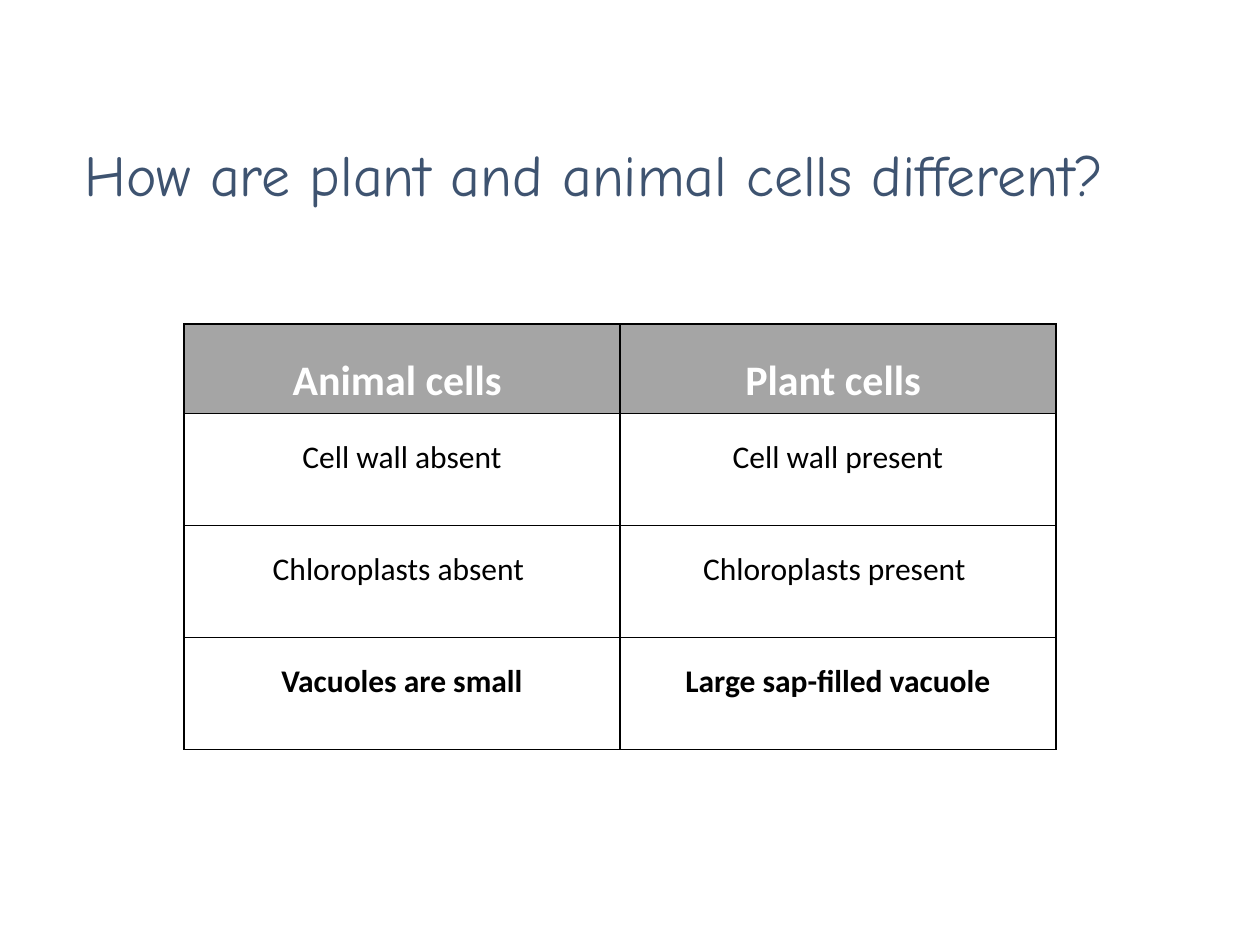
from lxml import etree
from pptx import Presentation
from pptx.dml.color import RGBColor
from pptx.enum.text import MSO_ANCHOR, PP_ALIGN
from pptx.oxml.ns import qn
from pptx.util import Emu, Pt

LEFT, CENTER = PP_ALIGN.LEFT, PP_ALIGN.CENTER
TOP, MIDDLE = MSO_ANCHOR.TOP, MSO_ANCHOR.MIDDLE
COLORS = {"title": "3E5370", "header": "A5A5A5", "white": "FFFFFF", "black": "000000"}
ROWS = [
    ("Animal cells ", "Plant cells "),
    ("Cell wall absent", "Cell wall present"),
    ("Chloroplasts absent ", "Chloroplasts present "),
    ("Vacuoles are small", "Large sap-filled vacuole"),
]
HEADER_HEIGHT, ROW_HEIGHT, COLUMN_WIDTH = 88, 112, 436


def px(length):
    return Emu(round(length * 914400 / 126))


def style_text(para, font_name, size, color, bold):
    for span in para.runs:
        span.font.name = font_name
        span.font.size = Pt(size)
        span.font.bold = bold
        span.font.color.rgb = RGBColor.from_string(COLORS[color])


deck = Presentation()
deck.slide_width, deck.slide_height = px(1260), px(945)
page = deck.slides.add_slide(deck.slide_layouts[5])

title = page.shapes.title
title.left, title.top, title.width, title.height = px(72), px(86), px(1188), px(183)
title.text_frame.text = "How are plant and animal cells different?"
title.text_frame.vertical_anchor = MIDDLE
para = title.text_frame.paragraphs[0]
para.alignment = LEFT
para.line_spacing = 0.9
style_text(para, "Comic Neue", 33, "title", False)

table = page.shapes.add_table(
    len(ROWS), 2, px(184), px(324), px(2 * COLUMN_WIDTH), px(HEADER_HEIGHT + 3 * ROW_HEIGHT)
).table
for column in table.columns:
    column.width = px(COLUMN_WIDTH)

for row_index, labels in enumerate(ROWS):
    is_header = row_index == 0
    is_bold = row_index in (0, len(ROWS) - 1)
    table.rows[row_index].height = px(HEADER_HEIGHT if is_header else ROW_HEIGHT)
    for column_index, label in enumerate(labels):
        cell = table.cell(row_index, column_index)
        properties = cell._tc.get_or_add_tcPr()
        for side in ("a:lnL", "a:lnR", "a:lnT", "a:lnB"):
            border = etree.SubElement(properties, qn(side), w=str(Pt(1)))
            fill = etree.SubElement(border, qn("a:solidFill"))
            etree.SubElement(fill, qn("a:srgbClr"), val=COLORS["black"])
        cell.fill.solid()
        cell.fill.fore_color.rgb = RGBColor.from_string(COLORS["header" if is_header else "white"])
        cell.vertical_anchor = TOP
        cell.text_frame.text = label
        para = cell.text_frame.paragraphs[0]
        para.alignment = CENTER
        para.line_spacing = 1.5
        style_text(para, "Calibri", 24 if is_header else 18, "white" if is_header else "black", is_bold)

deck.save("out.pptx")
